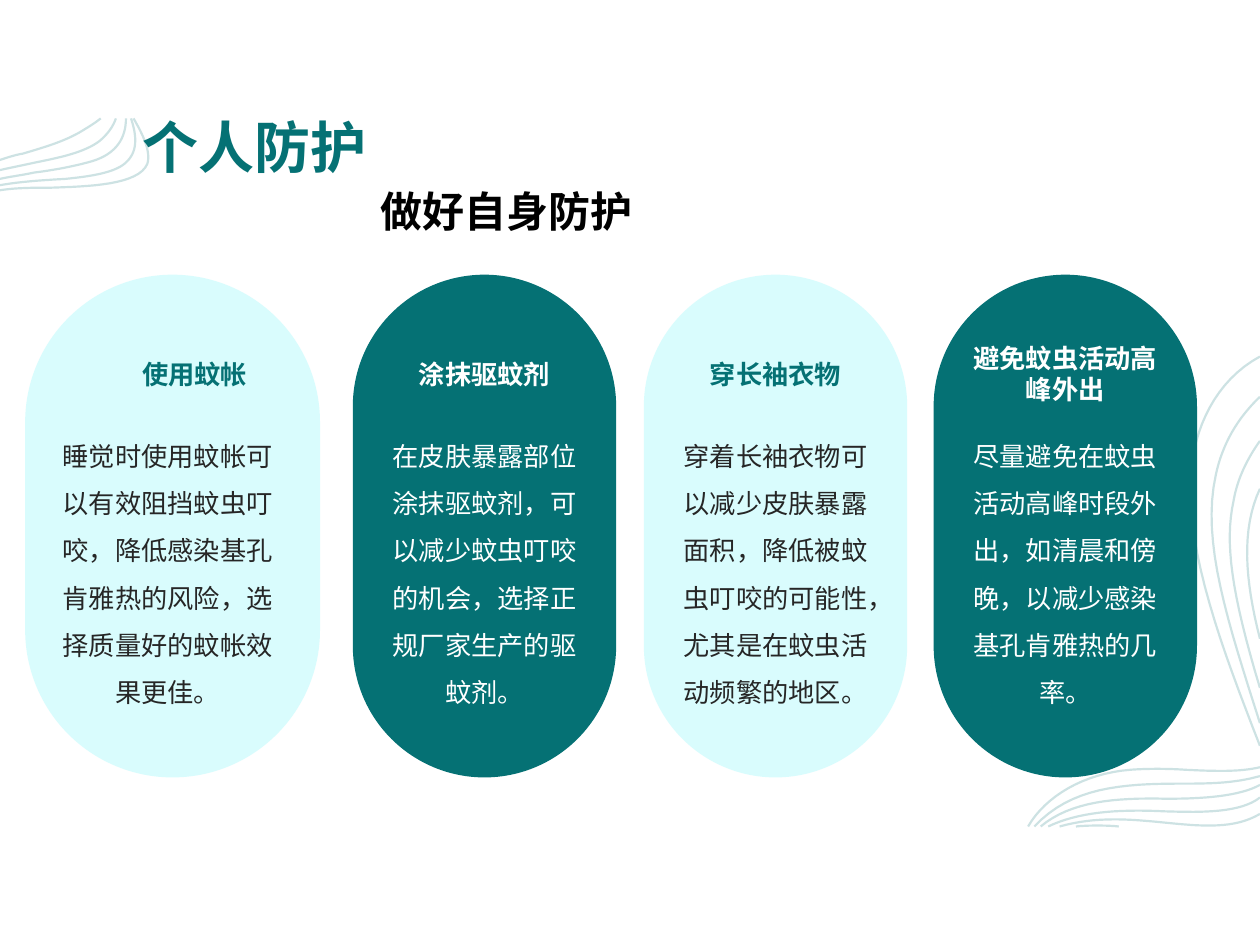
from lxml.etree import SubElement
from pptx import Presentation
from pptx.dml.color import RGBColor
from pptx.enum.shapes import MSO_SHAPE
from pptx.enum.text import MSO_ANCHOR, MSO_AUTO_SIZE, PP_ALIGN
from pptx.oxml.ns import qn
from pptx.util import Inches, Pt

COLORS = {"teal": "057174", "aqua": "6AF5F9", "ink": "262626",
          "white": "FFFFFF", "black": "000000"}
CJK = "Noto Sans CJK SC"

# Each strand is a start point, then two controls and an end per Bezier segment.
TOP_LEFT_WAVES = [
    [(0, 1.27), (.06, 1.25), (.12, 1.23), (.18, 1.22), (.35, 1.17), (.52, 1.12),
     (.65, 1.04), (.7, 1.01), (.75, .98), (.8, .94)],
    [(1.06, .94), (1.13, 1.06), (1.2, 1.2), (1.17, 1.3), (1.1, 1.47), (.7, 1.48),
     (.4, 1.49), (.27, 1.49), (.13, 1.49), (0, 1.51)],
    [(1.04, .94), (1.08, 1.06), (1.1, 1.19), (1.01, 1.28), (.93, 1.37), (.72, 1.4),
     (.52, 1.42), (.35, 1.43), (.17, 1.44), (0, 1.47)],
    [(1, .94), (1, 1.09), (.93, 1.22), (.73, 1.28), (.59, 1.32), (.43, 1.35),
     (.27, 1.37), (.18, 1.39), (.09, 1.4), (0, 1.42)],
    [(.92, .94), (.9, 1), (.86, 1.06), (.79, 1.12), (.67, 1.21), (.48, 1.25),
     (.28, 1.29), (.19, 1.31), (.09, 1.33), (0, 1.35)],
]
RIGHT_WAVES = [
    [(10, 3.88), (9.85, 4.2), (9.88, 4.6), (10, 5.07)],
    [(10, 3.5), (9.9, 3.64), (9.82, 3.8), (9.79, 3.98), (9.72, 4.3), (9.77, 4.7),
     (10, 5.46)],
    [(10, 3.15), (9.82, 3.32), (9.7, 3.53), (9.65, 3.77), (9.53, 4.3), (9.75, 4.95),
     (10, 5.74)],
    [(10, 2.83), (9.65, 3.02), (9.47, 3.4), (9.45, 3.79), (9.42, 4.4), (9.7, 5.15),
     (10, 5.92)],
    [(10, 6.09), (9.83, 6.13), (9.62, 6.12), (9.41, 6.11), (9.26, 6.1), (9.11, 6.1),
     (8.97, 6.11), (8.6, 6.14), (8.3, 6.32), (8.16, 6.56)],
    [(10, 6.16), (9.79, 6.22), (9.58, 6.22), (9.37, 6.22), (8.9, 6.22), (8.5, 6.25),
     (8.21, 6.56)],
    [(10, 6.23), (9.84, 6.32), (9.55, 6.34), (9.26, 6.34), (8.85, 6.33), (8.5, 6.36),
     (8.26, 6.56)],
    [(10, 6.33), (9.85, 6.45), (9.55, 6.45), (9.25, 6.44), (8.85, 6.42), (8.55, 6.45),
     (8.32, 6.56)],
    [(10, 6.46), (9.8, 6.58), (9.55, 6.56), (9.25, 6.53), (8.95, 6.5), (8.7, 6.48),
     (8.41, 6.56)],
    [(8.54, 6.56), (8.64, 6.55), (8.78, 6.55), (8.88, 6.56)],
]

# (left, width), (body left, body width), heading left, heading, body
CARDS = [
    ((.2, 2.34), (.45, 1.76), .73, "使用蚊帐",
     "睡觉时使用蚊帐可以有效阻挡蚊虫叮咬，降低感染基孔肯雅热的风险，选择质量好的蚊帐效果更佳。"),
    ((2.8, 2.09), (3.03, 1.63), 3.03, "涂抹驱蚊剂",
     "在皮肤暴露部位涂抹驱蚊剂，可以减少蚊虫叮咬的机会，选择正规厂家生产的驱蚊剂。"),
    ((5.11, 2.09), (5.34, 1.63), 5.34, "穿长袖衣物",
     "穿着长袖衣物可以减少皮肤暴露面积，降低被蚊虫叮咬的可能性，尤其是在蚊虫活动频繁的地区。"),
    ((7.41, 2.09), (7.64, 1.63), 7.64, "避免蚊虫活动高峰外出",
     "尽量避免在蚊虫活动高峰时段外出，如清晨和傍晚，以减少感染基孔肯雅热的几率。"),
]


def rgb(name):
    return RGBColor.from_string(COLORS[name])


def set_alpha(fill_parent, percent):
    """Make the solid fill below the given XML element translucent."""
    clr = fill_parent.find(qn("a:solidFill")).find(qn("a:srgbClr"))
    SubElement(clr, qn("a:alpha")).set("val", str(percent * 1000))


def bezier(points, steps=16):
    """Yield points along a chain of cubic Bezier segments."""
    yield points[0]
    for i in range(0, len(points) - 1, 3):
        for n in range(1, steps + 1):
            t = n / steps
            weights = ((1 - t) ** 3, 3 * t * (1 - t) ** 2, 3 * t * t * (1 - t), t ** 3)
            yield tuple(sum(w * pt[axis] for w, pt in zip(weights, points[i:i + 4]))
                        for axis in (0, 1))


def add_waves(s, strands):
    """Draw all strands as the open contours of one freeform."""
    curves = [[(Inches(x), Inches(y)) for x, y in bezier(pts)] for pts in strands]
    builder = s.shapes.build_freeform(*curves[0][0])
    for i, (start, *rest) in enumerate(curves):
        if i:
            builder.move_to(*start)
        builder.add_line_segments(rest, close=False)
    waves = builder.convert_to_shape()
    waves.shadow.inherit = False
    waves.fill.background()
    waves.line.color.rgb = rgb("teal")
    waves.line.width = Pt(1.25)
    set_alpha(waves.line._get_or_add_ln(), 20)


def write(sp, text, size, color, font=CJK, bold=False, align=PP_ALIGN.LEFT,
          spacing=1.0, anchor=MSO_ANCHOR.TOP, insets=(0, 0, 0, 0)):
    tf = sp.text_frame
    frame = {"word_wrap": True, "auto_size": MSO_AUTO_SIZE.NONE,
             "vertical_anchor": anchor}
    sides = ("margin_left", "margin_top", "margin_right", "margin_bottom")
    frame.update(zip(sides, map(Inches, insets)))
    for name, value in frame.items():
        setattr(tf, name, value)
    p = tf.paragraphs[0]
    p.alignment, p.line_spacing = align, spacing
    r = p.add_run()
    r.text = text
    for name, value in {"size": Pt(size), "bold": bold, "name": font}.items():
        setattr(r.font, name, value)
    r.font.color.rgb = rgb(color)
    if font == CJK:
        SubElement(r.font._element, qn("a:ea")).set("typeface", font)


def add_text(s, box, text, size, color, **style):
    write(s.shapes.add_textbox(*map(Inches, box)), text, size, color, **style)


def add_card(s, pill, body_span, heading_left, heading, body, dark):
    left, width = pill
    sp = s.shapes.add_shape(MSO_SHAPE.ROUNDED_RECTANGLE, Inches(left), Inches(2.18),
                            Inches(width), Inches(3.99))
    sp.adjustments[0] = 0.5
    sp.shadow.inherit = False
    sp.line.fill.background()
    sp.fill.solid()
    sp.fill.fore_color.rgb = rgb("teal" if dark else "aqua")
    if not dark:
        set_alpha(sp._element.spPr, 25)
    body_left, body_width = body_span
    add_text(s, (body_left, 3.37, body_width, 2.24), body, 15,
             "white" if dark else "ink", align=PP_ALIGN.CENTER, spacing=1.5)
    add_text(s, (heading_left, 2.71, 1.63, .47), heading, 15,
             "white" if dark else "teal", bold=True, align=PP_ALIGN.CENTER,
             anchor=MSO_ANCHOR.MIDDLE, insets=(.07, .04, .07, 0))


def add_title(s, text):
    title = s.shapes.title
    box = {"left": 1.13, "top": .83, "width": 8.3, "height": .6}
    for name, value in box.items():
        setattr(title, name, Inches(value))
    write(title, text, 32, "teal", bold=True, anchor=MSO_ANCHOR.BOTTOM)
    title.element.getparent().append(title.element)  # in front of the waves


def main():
    prs = Presentation()
    prs.slide_width, prs.slide_height = Inches(10), Inches(7.5)
    s = prs.slides.add_slide(prs.slide_layouts[5])
    for strands in (TOP_LEFT_WAVES, RIGHT_WAVES):
        add_waves(s, strands)
    add_title(s, "个人防护")
    for i, card in enumerate(CARDS):
        add_card(s, *card, dark=i % 2 == 1)
    add_text(s, (2.92, 1.42, 5.78, .76), "做好自身防护", 24, "black", font="Arial",
             bold=True, insets=(.1, .05, .1, .05))
    prs.save("out.pptx")


if __name__ == "__main__":
    main()
